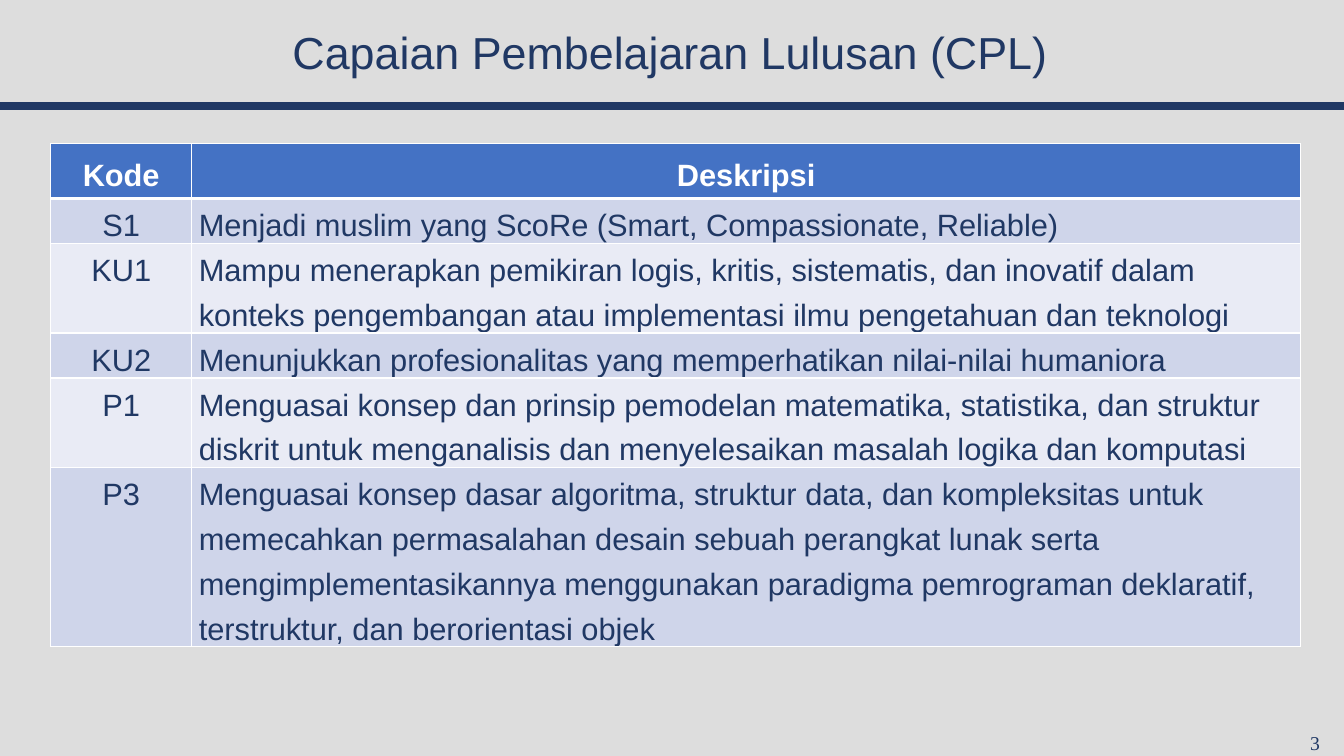
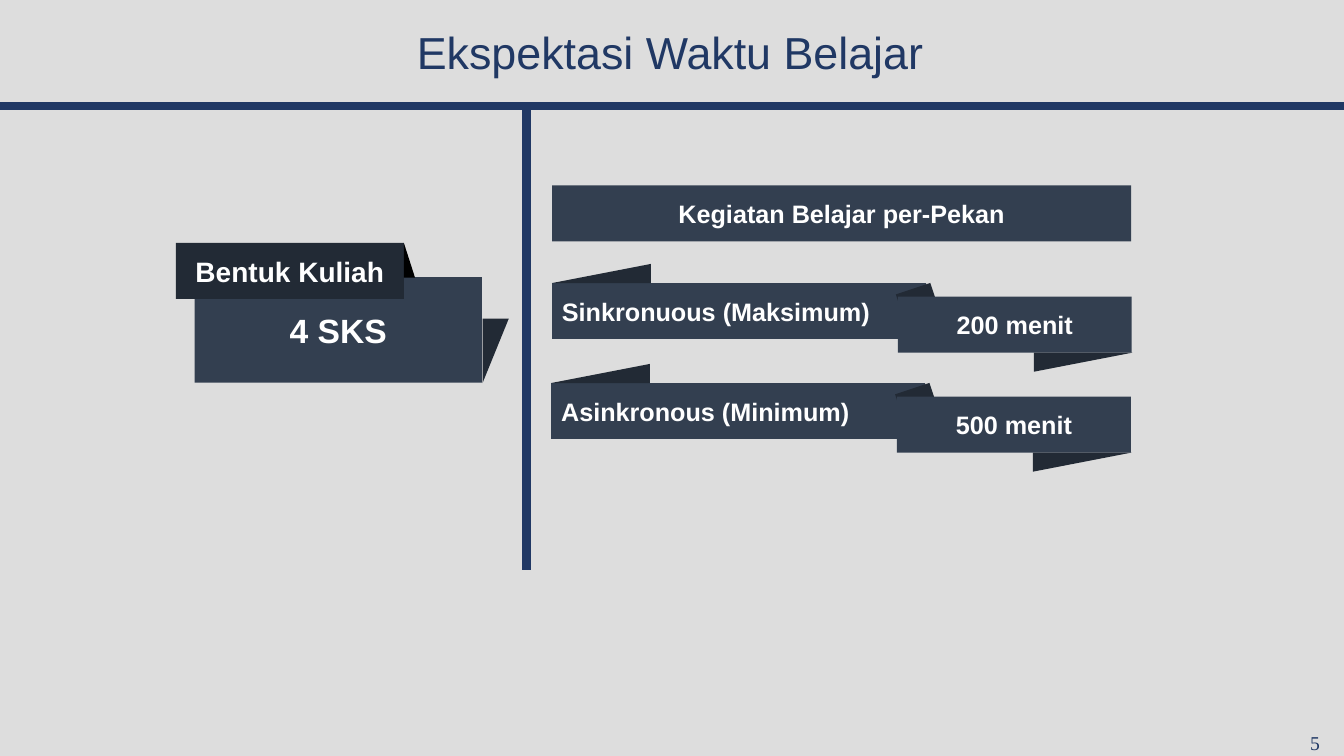
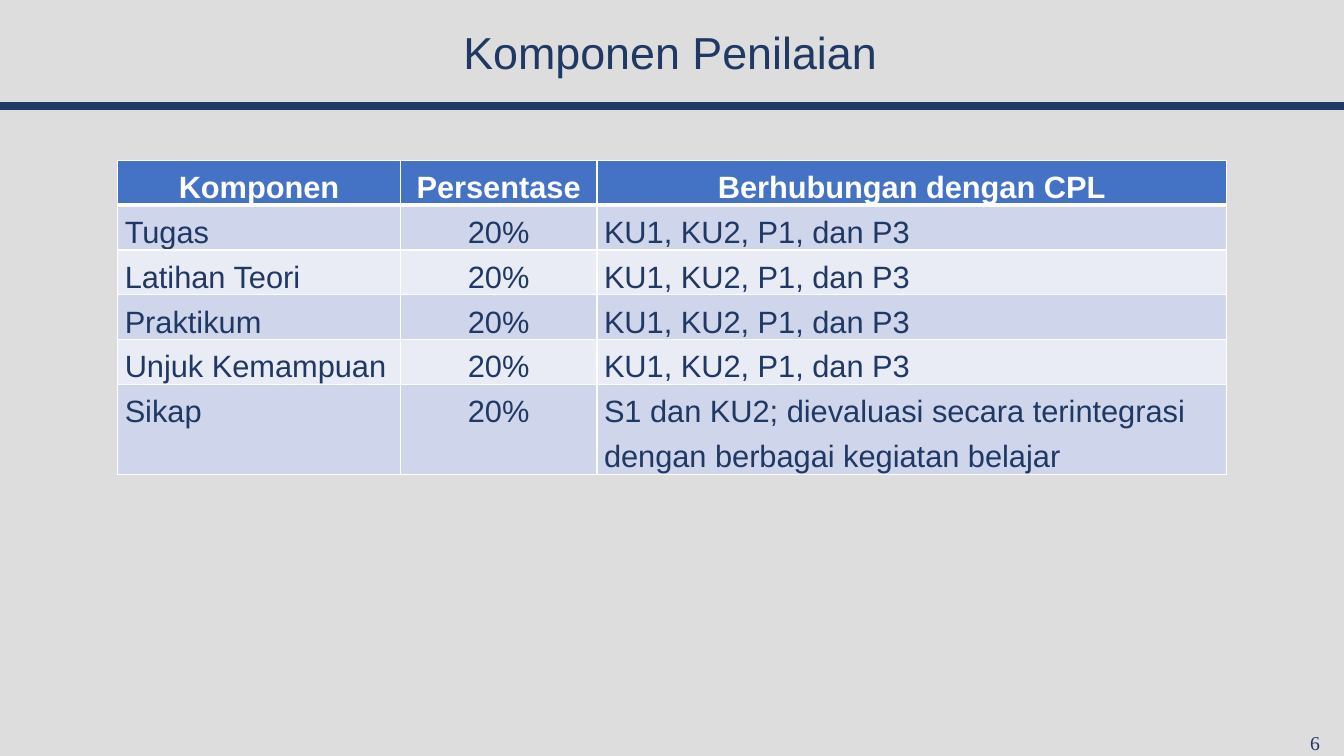
from lxml.etree import SubElement
from pptx import Presentation
from pptx.dml.color import RGBColor
from pptx.enum.shapes import MSO_CONNECTOR, MSO_SHAPE
from pptx.enum.text import MSO_ANCHOR, PP_ALIGN
from pptx.oxml import parse_xml
from pptx.oxml.ns import nsdecls, qn
from pptx.util import Inches, Pt

NAVY = RGBColor(0x20, 0x38, 0x64)
SLATE = RGBColor(0x33, 0x3F, 0x50)
DARK = RGBColor(0x22, 0x2A, 0x35)
BLACK = RGBColor(0, 0, 0)
WHITE = RGBColor(0xFF, 0xFF, 0xFF)
PALE = RGBColor(0xDD, 0xDD, 0xDD)
HEADER = RGBColor(0x44, 0x72, 0xC4)
BANDS = [RGBColor(0xE9, 0xEB, 0xF5), RGBColor(0xCF, 0xD5, 0xEA)]
FONT = "Arial"
LEFT, CENTER = PP_ALIGN.LEFT, PP_ALIGN.CENTER

deck = Presentation()
deck.slide_width, deck.slide_height = Inches(13.33), Inches(7.5)
COLUMN, ROW = deck.slide_width / 100, deck.slide_height / 100
RULE_TOP = 14
BAR_HEIGHT = 7.4


def add_rule(page, left, top, right, bottom):
    rule = page.shapes.add_connector(
        MSO_CONNECTOR.STRAIGHT, int(left * COLUMN), int(top * ROW), int(right * COLUMN), int(bottom * ROW))
    rule.line.color.rgb = NAVY
    rule.line.width = Pt(6)
    SubElement(rule.element.spPr, qn("a:effectLst"))
    return rule


def add_block(page, kind, left, top, width, height, color, text="", size=18, align=CENTER, rotation=0, flip=None):
    block = page.shapes.add_shape(
        kind, int(left * COLUMN), int(top * ROW), int(width * COLUMN), int(height * ROW))
    block.shadow.inherit = False
    block.fill.solid()
    block.fill.fore_color.rgb = color
    block.line.fill.background()
    block.rotation = rotation
    if flip:
        block.element.spPr.find(qn("a:xfrm")).set(flip, "1")
    if text:
        block.text_frame.text = text
        block.text_frame.vertical_anchor = MSO_ANCHOR.MIDDLE
        para = block.text_frame.paragraphs[0]
        para.alignment = align
        font = para.runs[0].font
        font.name, font.size, font.bold = FONT, Pt(size), True
        font.color.rgb = WHITE


deck.slide_master.background.fill.solid()
deck.slide_master.background.fill.fore_color.rgb = PALE
layout = deck.slide_layouts[5]
pages = []
for title, number in [
    ("Capaian Pembelajaran Lulusan (CPL)", "3"),
    ("Ekspektasi Waktu Belajar", "5"),
    ("Komponen Penilaian", "6"),
]:
    page = deck.slides.add_slide(layout)
    pages.append(page)
    heading = page.shapes.title
    heading.left, heading.top = int(3 * COLUMN), int(2.67 * ROW)
    heading.width, heading.height = int(93.75 * COLUMN), int(9.33 * ROW)
    heading.text_frame.text = title
    heading.text_frame.vertical_anchor = MSO_ANCHOR.MIDDLE
    para = heading.text_frame.paragraphs[0]
    para.alignment, para.line_spacing = CENTER, 0.9
    font = para.runs[0].font
    font.name, font.size = FONT, Pt(32)
    font.color.rgb = NAVY
    box = page.shapes.add_textbox(int(96.75 * COLUMN), int(96 * ROW), int(3.25 * COLUMN), int(4.53 * ROW))
    box.text_frame.text = number
    box.text_frame.word_wrap = False
    font = box.text_frame.paragraphs[0].runs[0].font
    font.name, font.size = "Times New Roman", Pt(14)
    font.color.rgb = NAVY

outcomes_page, time_page, grading_page = pages
title_rule = add_rule(outcomes_page, 0, RULE_TOP, 100, RULE_TOP)
layout.shapes.element.append(title_rule.element)

outcomes = [
    ("Kode", "Deskripsi"),
    ("S1", "Menjadi muslim yang ScoRe (Smart, Compassionate, Reliable)"),
    ("KU1", "Mampu menerapkan pemikiran logis, kritis, sistematis, dan inovatif dalam konteks "
            "pengembangan atau implementasi ilmu pengetahuan dan teknologi"),
    ("KU2", "Menunjukkan profesionalitas yang memperhatikan nilai-nilai humaniora"),
    ("P1", "Menguasai konsep dan prinsip pemodelan matematika, statistika, dan struktur diskrit "
           "untuk menganalisis dan menyelesaikan masalah logika dan komputasi"),
    ("P3", "Menguasai konsep dasar algoritma, struktur data, dan kompleksitas untuk memecahkan "
           "permasalahan desain sebuah perangkat lunak serta mengimplementasikannya menggunakan "
           "paradigma pemrograman deklaratif, terstruktur, dan berorientasi objek"),
]
grading = [("Komponen", "Persentase", "Berhubungan dengan CPL")]
for component in ["Tugas", "Latihan Teori", "Praktikum", "Unjuk Kemampuan"]:
    grading.append((component, "20%", "KU1, KU2, P1, dan P3"))
grading.append(("Sikap", "20%", "S1 dan KU2; dievaluasi secara terintegrasi dengan berbagai kegiatan belajar"))

for page, records, left, top, widths, aligns, header_margin, before, after in [
    (outcomes_page, outcomes, 3.77, 19, [10.5, 82.5], [CENTER, LEFT], 0.05, 1, 2),
    (grading_page, grading, 8.76, 21.2, [21.03, 14.63, 46.84], [LEFT, CENTER, LEFT], 0, 0, 0),
]:
    table = page.shapes.add_table(
        len(records), len(widths), int(left * COLUMN), int(top * ROW),
        int(sum(widths) * COLUMN), int(len(records) * 5.47 * ROW)).table
    for column, width in zip(table.columns, widths):
        column.width = int(width * COLUMN)
    for row, record in enumerate(records):
        is_header = row == 0
        for index, text in enumerate(record):
            cell = table.cell(row, index)
            cell.text_frame.text = text
            cell.margin_left = cell.margin_right = Inches(0.07)
            cell.margin_top = cell.margin_bottom = Inches(header_margin if is_header else 0)
            cell.fill.solid()
            cell.fill.fore_color.rgb = HEADER if is_header else BANDS[row % 2]
            para = cell.text_frame.paragraphs[0]
            para.alignment = CENTER if is_header else aligns[index]
            para.line_spacing = Pt(32)
            if not is_header:
                para.space_before, para.space_after = Pt(before), Pt(after)
            font = para.runs[0].font
            font.name, font.size, font.bold = FONT, Pt(22), is_header
            font.color.rgb = WHITE if is_header else NAVY
            properties = cell._tc.get_or_add_tcPr()
            for place, side in enumerate("LRTB"):
                thick = (row, side) in [(0, "B"), (1, "T")]
                properties.insert(place, parse_xml(
                    f'<a:ln{side} {nsdecls("a")} w="{Pt(3 if thick else 1)}">'
                    f'<a:solidFill><a:srgbClr val="{WHITE}"/></a:solidFill></a:ln{side}>'))

RECTANGLE, TRIANGLE = MSO_SHAPE.RECTANGLE, MSO_SHAPE.RIGHT_TRIANGLE
add_rule(time_page, 39.18, RULE_TOP, 39.18, 75.4)
add_block(time_page, RECTANGLE, 14.48, 36.67, 21.38, 13.95, SLATE, "4 SKS", 24)
add_block(time_page, RECTANGLE, 13.08, 32.13, 16.97, BAR_HEIGHT, DARK, "Bentuk Kuliah", 20)
add_block(time_page, TRIANGLE, 30.05, 32.13, 0.83, 4.6, BLACK)
add_block(time_page, TRIANGLE, 34.48, 44.67, 4.8, 3.47, DARK, rotation=90)
add_block(time_page, RECTANGLE, 41.07, 24.53, 43.1, BAR_HEIGHT, SLATE, "Kegiatan Belajar per-Pekan")

for index, (activity, duration) in enumerate([
    ("Sinkronuous (Maksimum)", "200 menit"),
    ("Asinkronous (Minimum)", "500 menit"),
]):
    left, top = 41.07 - 0.06 * index, 37.45 + 13.22 * index
    add_block(time_page, RECTANGLE, left, top, 27.83, BAR_HEIGHT, SLATE, activity, align=LEFT)
    add_block(time_page, RECTANGLE, left + 26.18, top + 0.55, 2.7, BAR_HEIGHT, DARK, rotation=341.5)
    add_block(time_page, RECTANGLE, left + 25.73, top + 1.8, 17.4, BAR_HEIGHT, SLATE, duration)
    add_block(time_page, TRIANGLE, left, top - 2.53, 7.35, 2.53, DARK, flip="flipH")
    add_block(time_page, TRIANGLE, left + 35.85, top + 9.2, 7.35, 2.53, DARK, flip="flipV")

deck.save("out.pptx")
